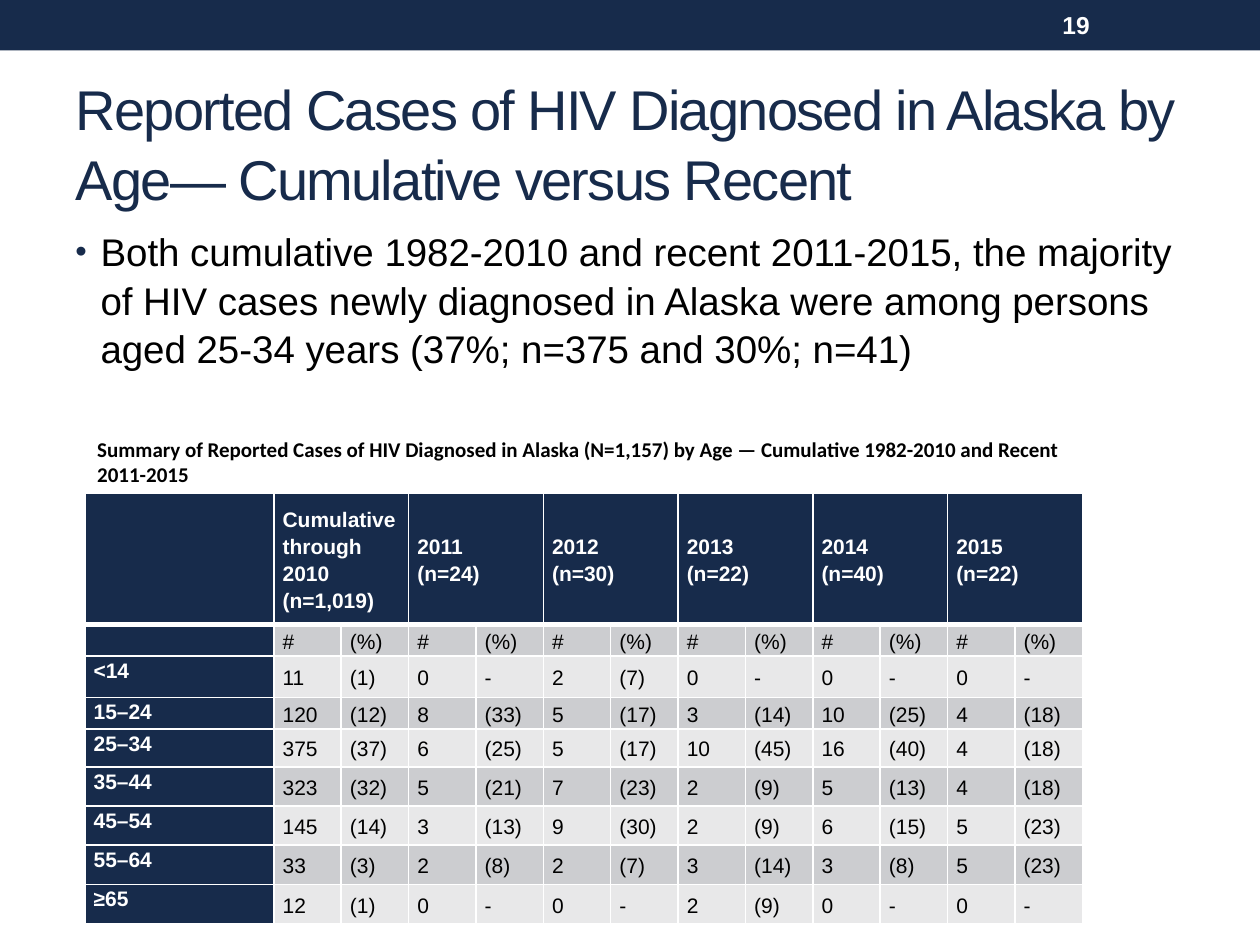
import pptx
import pptx.util
import pptx.dml.color
import pptx.enum.shapes
import pptx.enum.text
import pptx.oxml.ns
from lxml import etree

Pt = pptx.util.Pt
ANCHOR = pptx.enum.text.MSO_ANCHOR
COLORS = {
    "navy": "172B4B",
    "white": "FFFFFF",
    "black": "000000",
    "dark_stripe": "CCCDD0",
    "light_stripe": "E8E8E9",
}
YEARS = ["2011\n(n=24)", "2012\n(n=30)", "2013\n(n=22)", "2014\n(n=40)", "2015\n(n=22)"]
HEADINGS = ["Cumulative through 2010 (n=1,019)"] + YEARS
CASES_BY_AGE = {
    "<14": "11 (1) 0 - 2 (7) 0 - 0 - 0 -",
    "15–24": "120 (12) 8 (33) 5 (17) 3 (14) 10 (25) 4 (18)",
    "25–34": "375 (37) 6 (25) 5 (17) 10 (45) 16 (40) 4 (18)",
    "35–44": "323 (32) 5 (21) 7 (23) 2 (9) 5 (13) 4 (18)",
    "45–54": "145 (14) 3 (13) 9 (30) 2 (9) 6 (15) 5 (23)",
    "55–64": "33 (3) 2 (8) 2 (7) 3 (14) 3 (8) 5 (23)",
    "≥65": "12 (1) 0 - 0 - 2 (9) 0 - 0 -",
}
ROW_HEIGHTS = [75, 18, 23.5, 18, 21.7] + [22.4] * 4
AGE_WIDTH = 108
HEADER_RULE, GRID_RULE = 3, 1


def rgb(name):
    return pptx.dml.color.RGBColor.from_string(COLORS[name])


def add_xml(parent, tag, **attributes):
    return etree.SubElement(parent, pptx.oxml.ns.qn(tag), attributes)


def write(frame, text, size=12, color="black", bold=False, font="Arial",
          line_spacing=None, tracking=None):
    """Fill a text frame with one paragraph per line of text."""
    frame.word_wrap = True
    for index, line in enumerate(text.split("\n")):
        paragraph = frame.add_paragraph() if index else frame.paragraphs[0]
        paragraph.alignment = pptx.enum.text.PP_ALIGN.LEFT
        if line_spacing:
            paragraph.line_spacing = line_spacing
        if not line:
            add_xml(paragraph._p, "a:endParaRPr", sz=str(size * 100))
            continue
        run = paragraph.add_run()
        run.text = line
        run.font.size, run.font.bold, run.font.name = Pt(size), bold, font
        run.font.color.rgb = rgb(color)
        if tracking:
            run.font._element.set("spc", str(tracking * 100))


def add_text(slide, box, text, anchor=ANCHOR.MIDDLE, **text_format):
    frame = slide.shapes.add_textbox(*map(Pt, box)).text_frame
    frame.vertical_anchor = anchor
    write(frame, text, **text_format)
    return frame


def add_header_band(slide, left, top, width, height):
    band = slide.shapes.add_shape(
        pptx.enum.shapes.MSO_SHAPE.RECTANGLE, *map(Pt, (left, top, width, height)))
    band.shadow.inherit = False
    band.fill.solid()
    band.fill.fore_color.rgb = rgb("navy")
    band.line.fill.background()
    add_text(slide, (left + width - 120, top + 1.5, 84, height - 3), "19",
             size=14, color="white", bold=True)


def place_title(slide, *box):
    title = slide.shapes.title
    title.left, title.top, title.width, title.height = map(Pt, box)
    frame = title.text_frame
    frame.auto_size = pptx.enum.text.MSO_AUTO_SIZE.NONE
    frame.vertical_anchor = ANCHOR.MIDDLE
    write(frame, "Reported Cases of HIV Diagnosed in Alaska by Age— Cumulative versus Recent",
          size=32, color="navy", line_spacing=1.04, tracking=-1)


def add_finding(slide, *box):
    frame = add_text(
        slide, box,
        "Both cumulative 1982-2010 and recent 2011-2015, the majority of HIV cases newly "
        "diagnosed in Alaska were among persons aged 25-34 years (37%; n=375 and 30%; n=41)",
        anchor=ANCHOR.TOP, size=22, line_spacing=1.04)
    paragraph = frame.paragraphs[0]
    paragraph.space_before = Pt(3)
    properties = paragraph._p.get_or_add_pPr()
    properties.set("marL", str(Pt(14.4)))
    properties.set("indent", str(Pt(-14.4)))
    add_xml(add_xml(properties, "a:buClr"), "a:srgbClr", val=COLORS["navy"])
    add_xml(properties, "a:buSzPct", val="85000")
    add_xml(properties, "a:buFont", typeface="Arial")
    add_xml(properties, "a:buChar", char="•")


def set_borders(cell, top, bottom):
    properties = cell._tc.get_or_add_tcPr()
    sides = {"L": GRID_RULE, "R": GRID_RULE, "T": top, "B": bottom}
    for side, width in sides.items():
        line = add_xml(properties, f"a:ln{side}", w=str(Pt(width)))
        add_xml(add_xml(line, "a:solidFill"), "a:srgbClr", val=COLORS["white"])


def format_cell(cell, row, column):
    set_borders(cell, top=HEADER_RULE if row == 1 else GRID_RULE,
                bottom=HEADER_RULE if row == 0 else GRID_RULE)
    stripe = "dark_stripe" if row % 2 else "light_stripe"
    cell.fill.solid()
    cell.fill.fore_color.rgb = rgb("navy" if row == 0 or column == 0 else stripe)
    cell.margin_left = cell.margin_right = Pt(5)
    cell.margin_top = cell.margin_bottom = 0
    cell.vertical_anchor = ANCHOR.MIDDLE if column else ANCHOR.TOP


def add_case_table(slide, left, top, width, height):
    heading_cells = [cell for heading in HEADINGS for cell in (heading, "")]
    rows = [[""] + heading_cells, [""] + ["#", "(%)"] * len(HEADINGS)]
    rows += [[age] + cases.split() for age, cases in CASES_BY_AGE.items()]
    column_count = len(rows[0])
    table = slide.shapes.add_table(
        len(rows), column_count, *map(Pt, (left, top, width, height))).table
    for column in range(column_count):
        value_width = (width - AGE_WIDTH) / (column_count - 1)
        table.columns[column].width = Pt(value_width if column else AGE_WIDTH)
    for row, texts in enumerate(rows):
        table.rows[row].height = Pt(ROW_HEIGHTS[row])
        for column, text in enumerate(texts):
            cell = table.cell(row, column)
            format_cell(cell, row, column)
            is_label = row == 0 or column == 0
            write(cell.text_frame, text, color="white" if is_label else "black",
                  bold=is_label, line_spacing=1.15)
    for column in range(1, column_count, 2):
        table.cell(0, column).merge(table.cell(0, column + 1))


def main():
    deck = pptx.Presentation()
    deck.slide_width, deck.slide_height = Pt(720), Pt(540)
    slide = deck.slides.add_slide(deck.slide_layouts.get_by_name("Title Only"))
    add_header_band(slide, 0, 0, 720, 28.8)
    place_title(slide, 36, 42, 648, 78)
    add_finding(slide, 36, 126, 648, 102)
    add_case_table(slide, 48.5, 282, 570, sum(ROW_HEIGHTS))
    add_text(slide, (48.5, 246, 570, 36),
             "Summary of Reported Cases of HIV Diagnosed in Alaska (N=1,157) by Age — "
             "Cumulative 1982-2010 and Recent 2011-2015", bold=True, font="Calibri")
    deck.save("out.pptx")


if __name__ == "__main__":
    main()
